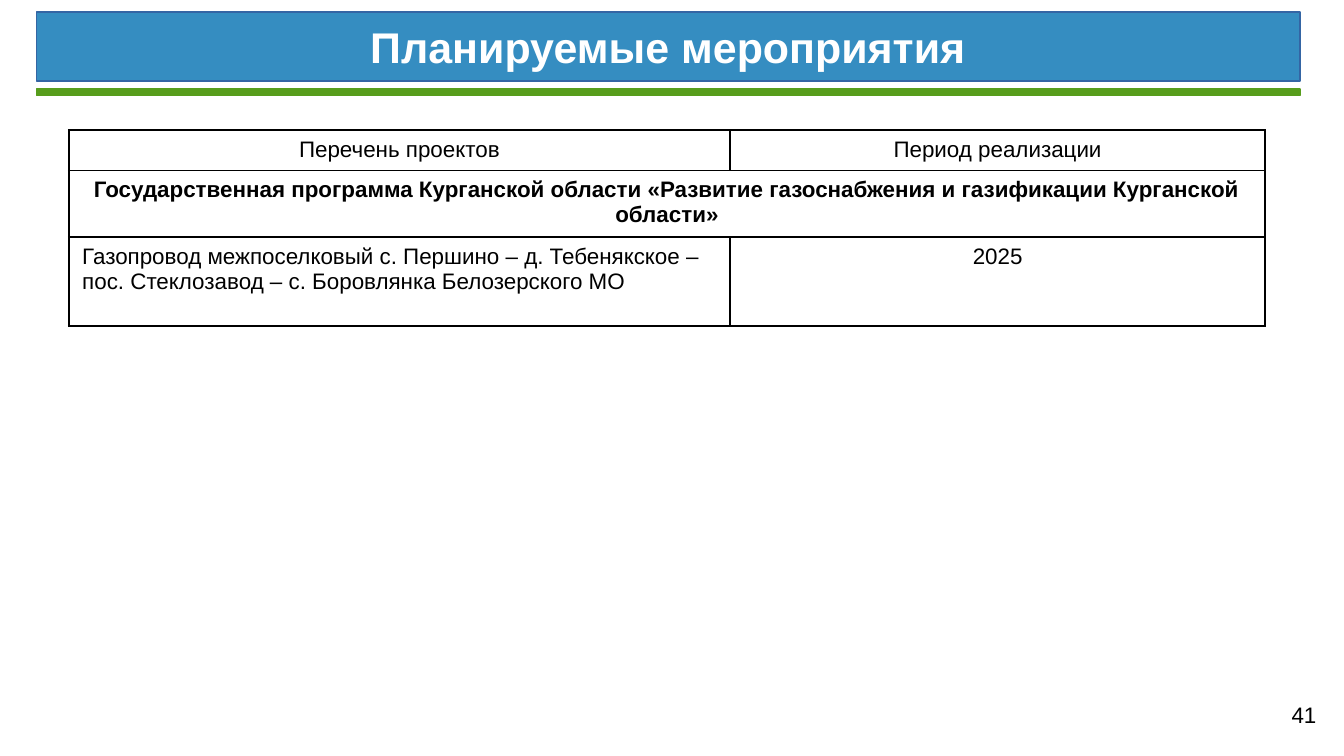
from lxml import etree
from pptx import Presentation
from pptx.dml.color import RGBColor
from pptx.enum.shapes import MSO_SHAPE
from pptx.enum.text import MSO_ANCHOR, PP_ALIGN
from pptx.oxml.ns import qn
from pptx.util import Cm, Pt

BLUE, EDGE, GREEN = "358DC1", "3465A4", "579D1C"
WHITE, BLACK = "FFFFFF", "000000"
LEFT, MID = PP_ALIGN.LEFT, PP_ALIGN.CENTER


def paint(form, color):
    """Give a fill or line fill a solid colour."""
    form.solid()
    form.fore_color.rgb = RGBColor.from_string(color)


def write(frame, text, size=12, color=BLACK, bold=False, align=LEFT):
    frame.word_wrap = True
    para = frame.paragraphs[0]
    para.alignment = align
    run = para.add_run()
    run.text = text
    run.font.name = "Arial"
    run.font.size = Pt(size)
    run.font.bold = bold
    paint(run.font.fill, color)


def add_bar(slide, box, fill, edge):
    bar = slide.shapes.add_shape(MSO_SHAPE.RECTANGLE, *map(Cm, box))
    bar.shadow.inherit = False
    paint(bar.fill, fill)
    paint(bar.line.fill, edge)
    bar.line.width = Pt(0.75)
    return bar


def add_head(slide, box, title):
    left, top, width, height = box
    # Title band
    band = add_bar(slide, (left, top, width, 1.3), BLUE, EDGE)
    band.text_frame.vertical_anchor = MSO_ANCHOR.MIDDLE
    write(band.text_frame, title, size=23, color=WHITE, bold=True, align=MID)
    # Green rule along the bottom of the box
    rule = 0.13
    add_bar(slide, (left, top + height - rule, width, rule), GREEN, GREEN)


def frame_cell(cell):
    """Draw the four borders, which must precede the fill in the XML."""
    props = cell._tc.get_or_add_tcPr()
    for spot, side in enumerate(("lnL", "lnR", "lnT", "lnB")):
        line = etree.Element(qn(f"a:{side}"), w=str(Pt(0.96)))
        fill = etree.SubElement(line, qn("a:solidFill"))
        etree.SubElement(fill, qn("a:srgbClr"), val=BLACK)
        props.insert(spot, line)


def add_plan(slide, box, cols, rows, data):
    table = slide.shapes.add_table(len(rows), len(cols), *map(Cm, box)).table
    for col, width in zip(table.columns, cols):
        col.width = Cm(width)
    for row, height in zip(table.rows, rows):
        row.height = Cm(height)
    for r, line in enumerate(data):
        # A single entry spans the whole row
        whole = len(line) == 1
        if whole:
            table.cell(r, 0).merge(table.cell(r, len(cols) - 1))
        for c in range(len(cols)):
            cell = table.cell(r, c)
            paint(cell.fill, WHITE)
            frame_cell(cell)
            if c < len(line):
                text, align = line[c]
                write(cell.text_frame, text, bold=whole, align=align)


def add_page(slide, box, number):
    note = slide.shapes.add_textbox(*map(Cm, box))
    frame = note.text_frame
    frame.margin_left = frame.margin_right = Cm(0.2)
    write(frame, number)


def main():
    deck = Presentation()
    deck.slide_width, deck.slide_height = Cm(25.4), Cm(14.29)
    slide = deck.slides.add_slide(deck.slide_layouts[6])

    add_head(slide, (0.69, 0.23, 23.88, 1.58), "Планируемые мероприятия")

    # Projects and their periods
    cols, rows = (12.5, 10.11), (0.76, 1.26, 1.68)
    data = [
        [("Перечень проектов", MID), ("Период реализации", MID)],
        [("Государственная программа Курганской области «Развитие "
          "газоснабжения и газификации Курганской области»", MID)],
        [("Газопровод межпоселковый с. Першино – д. Тебенякское – "
          "пос. Стеклозавод – с. Боровлянка Белозерского МО", LEFT),
         ("2025", MID)],
    ]
    add_plan(slide, (1.3, 2.46, sum(cols), sum(rows)), cols, rows, data)

    add_page(slide, (24.21, 13.13, 1.19, 0.99), "41")
    deck.save("out.pptx")


if __name__ == "__main__":
    main()
